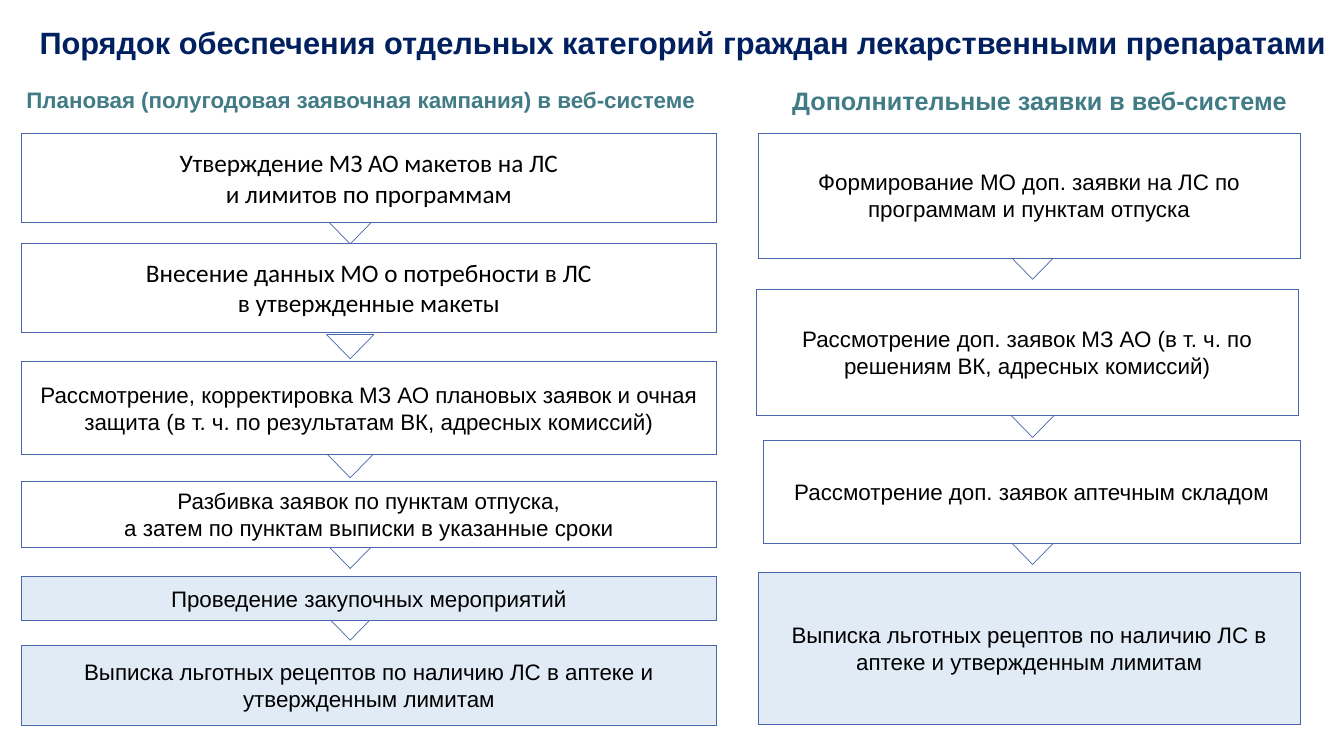
from pptx import Presentation
from pptx.dml.color import RGBColor
from pptx.enum import dml, shapes, text
from pptx.util import Pt

NAVY = RGBColor(0x00, 0x20, 0x60)
TEAL = RGBColor(0x41, 0x7B, 0x85)
BLUE = RGBColor(0x4A, 0x66, 0xAC)
PALE = RGBColor(0xE0, 0xEB, 0xF6)
WHITE = RGBColor(0xFF, 0xFF, 0xFF)
BLACK = RGBColor(0x00, 0x00, 0x00)

BODY = {"name": "Arial", "size": Pt(16), "bold": False}
LEAD = {"name": "Calibri", "size": Pt(18), "bold": False}
TITLE = {"name": "Arial", "size": Pt(22), "bold": True}
SMALL_HEAD = {"name": "Arial", "size": Pt(16), "bold": True}
LARGE_HEAD = {"name": "Arial", "size": Pt(18), "bold": True}

title_lines = ["Порядок обеспечения отдельных категорий граждан лекарственными препаратами"]
title_area = (-18.7, 13, 1013, 33.8)

headings = [
    ("Плановая (полугодовая заявочная кампания) в веб-системе", (9.4, 58.3, 496.8, 26.6), SMALL_HEAD),
    ("Дополнительные заявки в веб-системе", (487.4, 57.6, 510.5, 29), LARGE_HEAD),
]

prescription = ["Выписка льготных рецептов по наличию ЛС в аптеке и утвержденным лимитам"]
planned = [
    (["Утверждение МЗ АО макетов на ЛС", "и лимитов по программам"], 95, 64.1, LEAD, WHITE),
    (["Внесение данных МО о потребности в ЛС", "в утвержденные макеты"], 173.5, 64.1, LEAD, WHITE),
    (["Рассмотрение, корректировка МЗ АО плановых заявок и очная защита "
      "(в т. ч. по результатам ВК, адресных комиссий)"], 257.8, 67, BODY, WHITE),
    (["Разбивка заявок по пунктам отпуска,", "а затем по пунктам выписки в указанные сроки"],
     343.4, 47.5, BODY, WHITE),
    (["Проведение закупочных мероприятий"], 411.8, 31, BODY, PALE),
    (prescription, 460.8, 56.9, BODY, PALE),
]
additional = [
    (["Формирование МО доп. заявки на ЛС по программам и пунктам отпуска"],
     (541.4, 95, 387.4, 89.3), WHITE),
    (["Рассмотрение доп. заявок МЗ АО (в т. ч. по решениям ВК, адресных комиссий)"],
     (540, 206.6, 387.4, 90), WHITE),
    (["Рассмотрение доп. заявок аптечным складом"], (545, 314.6, 383.8, 73.4), WHITE),
    (prescription, (541.4, 409, 387.4, 108.2), PALE),
]
arrow_columns = [
    (233.3, [157, 239, 324, 388.8, 440]),
    (720.7, [182.2, 295.2, 385.9]),
]


def write(shape, lines, style, color, anchor):
    frame = shape.text_frame
    frame.word_wrap = True
    frame.vertical_anchor = anchor
    for index, line in enumerate(lines):
        para = frame.paragraphs[0] if index == 0 else frame.add_paragraph()
        para.alignment = text.PP_ALIGN.CENTER
        span = para.add_run()
        span.text = line
        for name, value in style.items():
            setattr(span.font, name, value)
        span.font.color.rgb = color


def add_figure(page, kind, area, fill, width):
    shape = page.shapes.add_shape(kind, *map(Pt, area))
    shape.shadow.inherit = False
    shape.fill.solid()
    shape.fill.fore_color.rgb = fill
    shape.line.color.rgb = BLUE
    shape.line.width = Pt(width)
    return shape


def add_step(page, lines, area, style, fill):
    box = add_figure(page, shapes.MSO_SHAPE.RECTANGLE, area, fill, 0.25)
    box.line.dash_style = dml.MSO_LINE.ROUND_DOT
    write(box, lines, style, BLACK, text.MSO_ANCHOR.MIDDLE)


def main():
    deck = Presentation()
    deck.slide_width, deck.slide_height = Pt(960), Pt(540)
    page = deck.slides.add_slide(deck.slide_layouts[5])

    title = page.shapes.title
    for name, value in zip(("left", "top", "width", "height"), title_area):
        setattr(title, name, Pt(value))
    write(title, title_lines, TITLE, NAVY, text.MSO_ANCHOR.MIDDLE)

    for left, tops in arrow_columns:
        for top in tops:
            arrow = add_figure(page, shapes.MSO_SHAPE.DOWN_ARROW, (left, top, 33.8, 17.3), WHITE, 0.5)
            arrow.adjustments[0] = 0.5
            arrow.adjustments[1] = 1

    for lines, top, height, style, fill in planned:
        add_step(page, lines, (15.1, top, 496.8, height), style, fill)
    for lines, area, fill in additional:
        add_step(page, lines, area, BODY, fill)

    for heading, area, style in headings:
        box = page.shapes.add_textbox(*map(Pt, area))
        write(box, [heading], style, TEAL, text.MSO_ANCHOR.TOP)

    deck.save("out.pptx")


if __name__ == "__main__":
    main()
